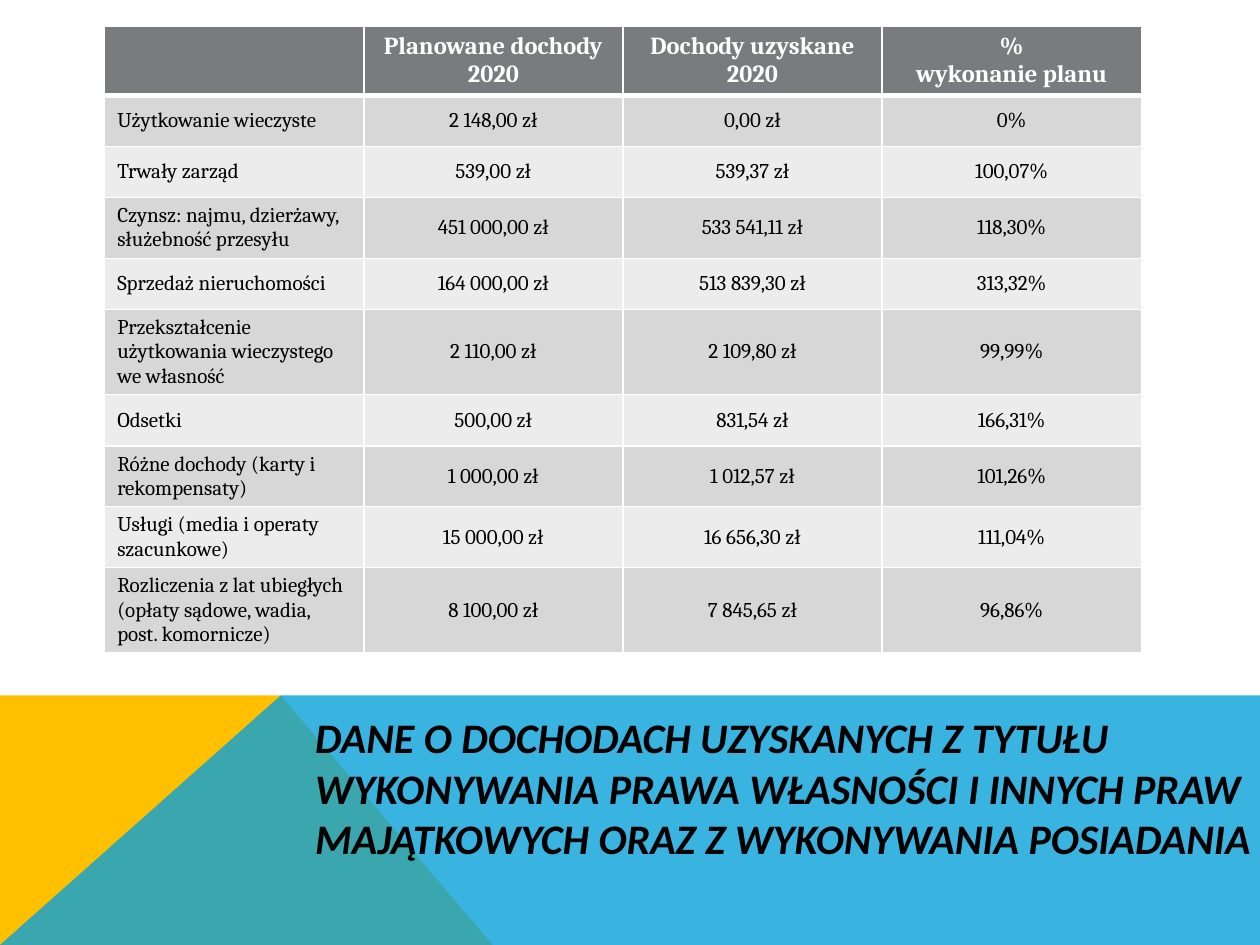
import lxml.etree
import pptx
import pptx.dml.color
import pptx.enum.text
import pptx.oxml.ns
import pptx.util

Cm = pptx.util.Cm
Pt = pptx.util.Pt
ALIGN = pptx.enum.text.PP_ALIGN
ANCHOR = pptx.enum.text.MSO_ANCHOR
qn = pptx.oxml.ns.qn


class Theme:
    yellow, blue = "FFC000", "08A1D9"
    header, odd_row, even_row = "797B7E", "D7D7D8", "ECECEC"
    white, black = "FFFFFF", "000000"
    title_size, header_size, body_size = 24, 14, 12
    title_font, table_font = "Calibri", "Cambria"


def format_text(text_frame, name, size, color, alignment, **styles):
    values = {"name": name, "size": Pt(size), **styles}
    for paragraph in text_frame.paragraphs:
        paragraph.alignment = alignment
        for key, value in values.items():
            setattr(paragraph.font, key, value)
        paragraph.font.color.rgb = pptx.dml.color.RGBColor.from_string(color)


def add_border(cell, side, width):
    properties = cell._tc.get_or_add_tcPr()
    line = lxml.etree.SubElement(properties, qn(f"a:{side}"), w=str(Pt(width)))
    fill = lxml.etree.SubElement(line, qn("a:solidFill"))
    lxml.etree.SubElement(fill, qn("a:srgbClr"), val=Theme.white)


presentation = pptx.Presentation()
presentation.slide_width, presentation.slide_height = Cm(25.4), Cm(19.05)
slide = presentation.slides.add_slide(presentation.slide_layouts[5])

# Coloured band along the bottom
top, bottom, peak = 14.02, 19.05, 5.66
bands = [
    (Theme.yellow, 100, [(0, bottom), (0, top), (peak, top), (9.93, bottom)]),
    (Theme.blue, 80, [(0, bottom), (peak, top), (25.4, top), (25.4, bottom)]),
]
for color, opacity, points in bands:
    corners = [(Cm(x), Cm(y)) for x, y in points]
    builder = slide.shapes.build_freeform(*corners[0])
    builder.add_line_segments(corners[1:], close=True)
    band = builder.convert_to_shape()
    band.shadow.inherit = False
    band.line.fill.background()
    band.fill.solid()
    band.fill.fore_color.rgb = pptx.dml.color.RGBColor.from_string(color)
    if opacity < 100:
        color_element = band._element.spPr.find(qn("a:solidFill"))[0]
        lxml.etree.SubElement(color_element, qn("a:alpha"), val=str(opacity * 1000))

# Title, in front of the band
title = slide.shapes.title
slide.shapes._spTree.append(title._element)
title_format = {"left": Cm(6.1), "top": Cm(15.11), "width": Cm(20.88), "height": Cm(1.52)}
for key, value in title_format.items():
    setattr(title, key, value)
title.text_frame.text = (
    "DANE O DOCHODACH UZYSKANYCH Z TYTUŁU WYKONYWANIA PRAWA WŁASNOŚCI "
    "I INNYCH PRAW MAJĄTKOWYCH ORAZ Z WYKONYWANIA POSIADANIA"
)
title.text_frame.word_wrap = True
title.text_frame.auto_size = pptx.enum.text.MSO_AUTO_SIZE.NONE
title.text_frame.vertical_anchor = ANCHOR.MIDDLE
format_text(title.text_frame, Theme.title_font, Theme.title_size, Theme.black,
            ALIGN.LEFT, bold=True, italic=True)

# Income table
rows = [
    ("", "Planowane dochody 2020", "Dochody uzyskane 2020", "%\nwykonanie planu"),
    ("Użytkowanie wieczyste", "2 148,00 zł", "0,00 zł", "0%"),
    ("Trwały zarząd", "539,00 zł", "539,37 zł", "100,07%"),
    ("Czynsz: najmu, dzierżawy, służebność przesyłu",
     "451 000,00 zł", "533 541,11 zł", "118,30%"),
    ("Sprzedaż nieruchomości", "164 000,00 zł", "513 839,30 zł", "313,32%"),
    ("Przekształcenie użytkowania wieczystego we własność",
     "2 110,00 zł", "2 109,80 zł", "99,99%"),
    ("Odsetki", "500,00 zł", "831,54 zł", "166,31%"),
    ("Różne dochody (karty i rekompensaty)", "1 000,00 zł", "1 012,57 zł", "101,26%"),
    ("Usługi (media i operaty szacunkowe)", "15 000,00 zł", "16 656,30 zł", "111,04%"),
    ("Rozliczenia z lat ubiegłych (opłaty sądowe, wadia, post. komornicze)",
     "8 100,00 zł", "7 845,65 zł", "96,86%"),
]
row_height = 1.03
table = slide.shapes.add_table(
    len(rows), len(rows[0]), Cm(2.11), Cm(0.53), Cm(20.9), Cm(row_height * len(rows))
).table
for row_index, row in enumerate(rows):
    is_header = row_index == 0
    table.rows[row_index].height = Cm(row_height)
    if is_header:
        fill, size, color = Theme.header, Theme.header_size, Theme.white
    else:
        fill = Theme.odd_row if row_index % 2 else Theme.even_row
        size, color = Theme.body_size, Theme.black
    borders = {"lnL": 1, "lnR": 1, "lnT": 3 if row_index == 1 else 1,
               "lnB": 3 if is_header else 1}
    for column_index, text in enumerate(row):
        cell = table.cell(row_index, column_index)
        cell.text = text
        cell.vertical_anchor = ANCHOR.TOP if is_header else ANCHOR.MIDDLE
        format_text(cell.text_frame, Theme.table_font, size, color,
                    ALIGN.CENTER if column_index else ALIGN.LEFT, bold=is_header)
        for side, width in borders.items():
            add_border(cell, side, width)
        cell.fill.solid()
        cell.fill.fore_color.rgb = pptx.dml.color.RGBColor.from_string(fill)

presentation.save("out.pptx")
